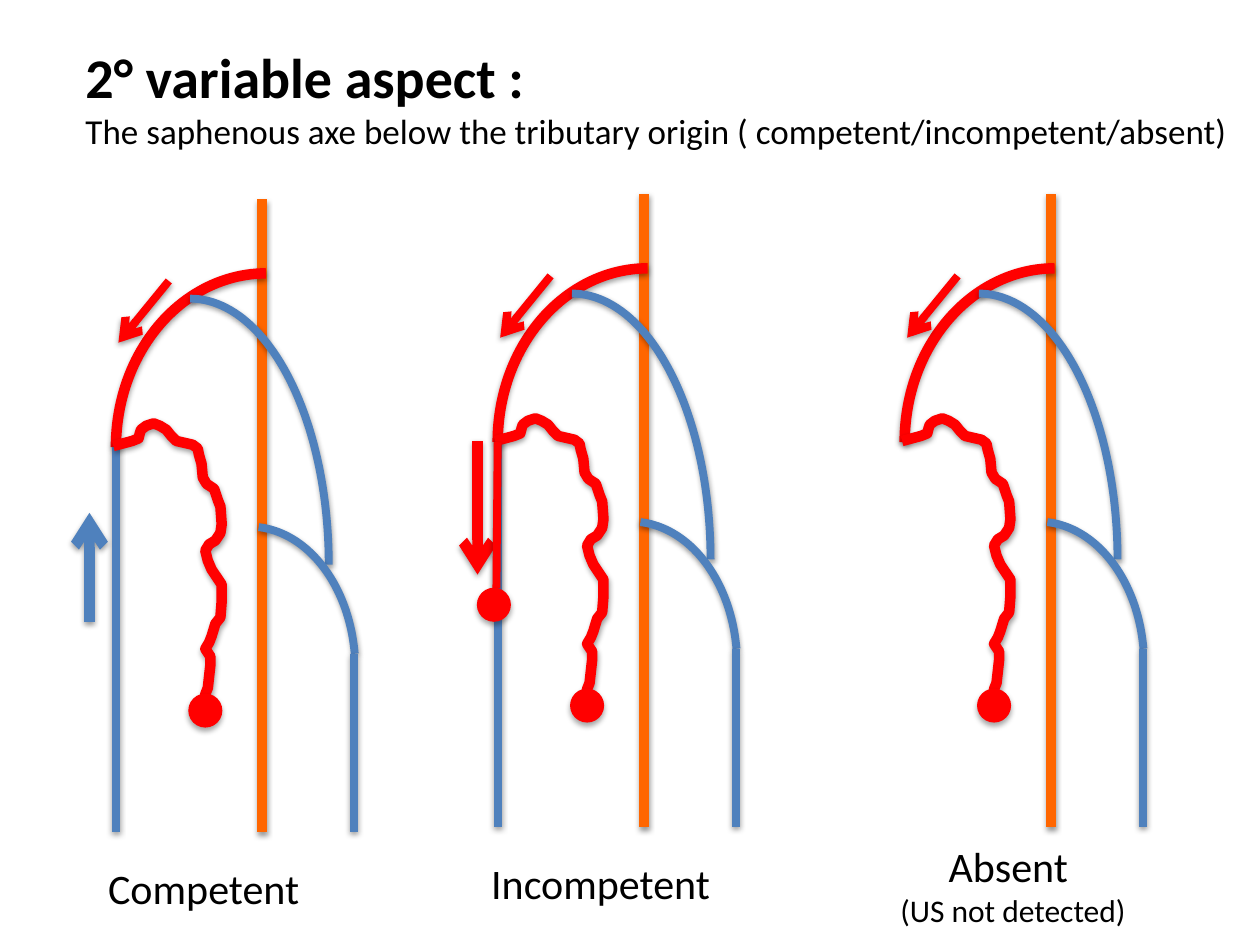
from lxml import etree
from pptx import Presentation
from pptx.dml.color import RGBColor
from pptx.enum.shapes import MSO_CONNECTOR, MSO_SHAPE
from pptx.enum.text import MSO_AUTO_SIZE, PP_ALIGN
from pptx.oxml import parse_xml
from pptx.oxml.ns import nsdecls, qn
from pptx.util import Inches, Pt

RED = RGBColor(0xFF, 0x00, 0x00)
BLUE = RGBColor(0x4F, 0x81, 0xBD)
ORANGE = RGBColor(0xFF, 0x66, 0x00)
BLACK = RGBColor(0x00, 0x00, 0x00)


def style(sp, color, width, arrow=False, alpha=38, dist=20000):
    """Colour the outline and give it a soft shadow straight below."""
    sp.line.color.rgb = color
    sp.line.width = Pt(width)
    ln = sp.line._get_or_add_ln()
    etree.SubElement(ln, qn("a:round"))
    if arrow:
        etree.SubElement(ln, qn("a:tailEnd"), type="arrow")
    sp._element.spPr.append(parse_xml(
        f'<a:effectLst {nsdecls("a")}><a:outerShdw blurRad="40000" dist="{dist}" '
        f'dir="5400000" rotWithShape="0"><a:srgbClr val="000000">'
        f'<a:alpha val="{alpha * 1000}"/></a:srgbClr></a:outerShdw></a:effectLst>'))


def line(x1, y1, x2, y2, color, width, arrow=False):
    sp = s.shapes.add_connector(MSO_CONNECTOR.STRAIGHT, Inches(x1), Inches(y1),
                                Inches(x2), Inches(y2))
    style(sp, color, width, arrow)


prs = Presentation()
prs.slide_width, prs.slide_height = Inches(10), Inches(7.5)
s = prs.slides.add_slide(prs.slide_layouts[6])

# Geometry of one leg; the others are shifted
ARCS = [  # left, top, width, height, flipped, adjustments, colour, width
    (0.92, 2.17, 2.38, 2.76, True, None, RED, 6),
    (0.41, 2.37, 2.2, 4.22, False, None, BLUE, 4.5),
    (1.14, 4.18, 1.68, 2.27, False, (164.209, 210.863), BLUE, 4.5),
]
TRIBUTARY = [
    (0.9, 3.54), (1.05, 3.5), (1.1, 3.48), (1.11, 3.44), (1.12, 3.41), (1.16, 3.38),
    (1.22, 3.36), (1.27, 3.38), (1.32, 3.41), (1.36, 3.46), (1.4, 3.5), (1.53, 3.53),
    (1.57, 3.56), (1.58, 3.61), (1.6, 3.68), (1.61, 3.79), (1.64, 3.84), (1.7, 3.88),
    (1.73, 3.97), (1.75, 4.02), (1.76, 4.16), (1.75, 4.23), (1.71, 4.29), (1.66, 4.32),
    (1.63, 4.37), (1.65, 4.45), (1.68, 4.52), (1.76, 4.64), (1.76, 4.77), (1.75, 4.9),
    (1.71, 4.95), (1.68, 5.05), (1.66, 5.1), (1.63, 5.15), (1.67, 5.21), (1.67, 5.28),
    (1.65, 5.46), (1.63, 5.51), (1.63, 5.61),
]
LEGS = [("competent", 0, 0), ("incompetent", 3.03, -0.04), ("absent", 6.26, -0.04)]

for state, dx, dy in LEGS:
    # Deep vein behind the superficial veins
    line(2.08 + dx, 1.58 + dy, 2.08 + dx, 6.6 + dy, ORANGE, 6)

    # Arched veins
    for x, y, w, h, flipped, adj, color, width in ARCS:
        sp = s.shapes.add_shape(MSO_SHAPE.ARC, Inches(x + dx), Inches(y + dy),
                                Inches(w), Inches(h))
        if flipped:
            sp._element.spPr.find(qn("a:xfrm")).set("flipH", "1")
        for i, value in enumerate(adj or ()):
            sp.adjustments[i] = value
        sp.fill.background()
        style(sp, color, width)

    # Straight veins
    if state != "absent":
        line(0.92 + dx, 3.55 + dy, 0.92 + dx, 6.6 + dy, BLUE, 4.5)
    line(2.81 + dx, 5.19 + dy, 2.81 + dx, 6.6 + dy, BLUE, 4.5)

    # Winding tributary
    points = [(Inches(x + dx), Inches(y + dy)) for x, y in TRIBUTARY]
    fb = s.shapes.build_freeform(*points[0])
    fb.add_line_segments(points[1:], close=False)
    sp = fb.convert_to_shape()
    sp.fill.background()
    style(sp, RED, 6)

    # Flow arrows and refluxing saphenous segment
    line(1.34 + dx, 2.23 + dy, 0.94 + dx, 2.72 + dy, RED, 4.5, True)
    dots = [(1.5 + dx, 5.51 + dy)]
    if state == "competent":
        line(0.71, 4.94, 0.71, 4.07, BLUE, 6, True)
    elif state == "incompetent":
        line(3.79, 3.5, 3.79, 4.56, RED, 6, True)
        line(3.95, 3.51, 3.94, 4.67, RED, 4.5)
        dots.append((3.79, 4.67))

    # Re-entry points
    for x, y in dots:
        sp = s.shapes.add_shape(MSO_SHAPE.OVAL, Inches(x), Inches(y),
                                Inches(0.26), Inches(0.26))
        sp.fill.solid()
        sp.fill.fore_color.rgb = RED
        style(sp, RED, 0.75, alpha=35, dist=23000)

# Heading and captions
TEXTS = [
    (0.58, 0.29, 9.29, 0.98, PP_ALIGN.LEFT, [
        ("2° variable aspect :", {"size": Pt(32), "bold": True}),
        ("The saphenous axe below the tributary origin ( competent/incompetent/absent)",
         {"size": Pt(20)})]),
    (0.76, 6.8, 1.74, 0.5, PP_ALIGN.LEFT, [("Competent", {"size": Pt(24)})]),
    (3.8, 6.76, 1.97, 0.5, PP_ALIGN.LEFT, [("Incompetent", {"size": Pt(24)})]),
    (7.03, 6.62, 2.02, 0.81, PP_ALIGN.CENTER, [
        ("Absent ", {"size": Pt(24)}), ("(US not detected)", {"size": Pt(18)})]),
]
for x, y, w, h, align, paragraphs in TEXTS:
    tf = s.shapes.add_textbox(Inches(x), Inches(y), Inches(w), Inches(h)).text_frame
    tf.word_wrap = False
    tf.auto_size = MSO_AUTO_SIZE.SHAPE_TO_FIT_TEXT
    for i, (text, fmt) in enumerate(paragraphs):
        p = tf.add_paragraph() if i else tf.paragraphs[0]
        p.alignment = align
        r = p.add_run()
        r.text = text
        for name, value in {"name": "Calibri", **fmt}.items():
            setattr(r.font, name, value)
        r.font.color.rgb = BLACK

prs.save("out.pptx")
